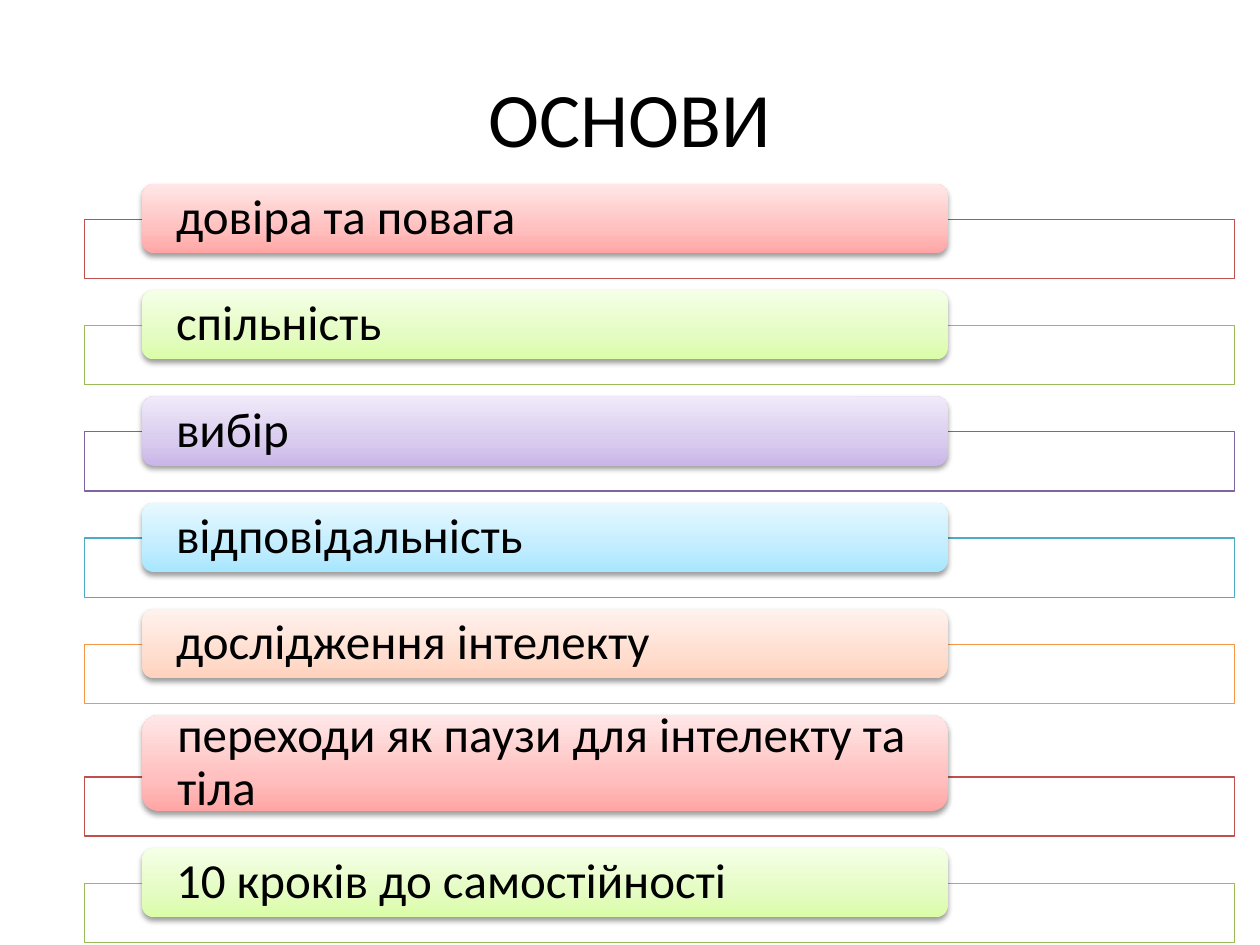
from lxml.etree import SubElement
from pptx import Presentation
from pptx.dml.color import RGBColor as RGB
from pptx.enum.shapes import MSO_SHAPE as SHAPE
from pptx.enum.text import MSO_ANCHOR as ANCHOR, PP_ALIGN as ALIGN
from pptx.oxml import parse_xml
from pptx.oxml.ns import nsdecls, qn
from pptx.util import Inches, Pt

COLORS = {"text": "000000", "frame": "FFFFFF", "shadow": "000000"}

# Frame line, then the gradient from bottom to top
THEMES = {
    "red": ("C0504D", ("FFA6A5", "FFC0BF", "FFE7E7")),
    "green": ("9BBB59", ("DAFDA7", "E4FCC2", "F5FFE7")),
    "purple": ("8064A2", ("C9B5E8", "D8CBEE", "F0EAF9")),
    "blue": ("4BACC6", ("A7E6FF", "C1EDFF", "E7F8FF")),
    "orange": ("F79646", ("FFD2BD", "FFDED0", "FFF2ED")),
}

# Grid units are tenths of an inch: 100 columns by 75 rows
COLS, ROWS = 100, 75
PILL_H, TALL_H, FRAME_H = 5.5, 7.6, 4.7
FIRST, LAST = 14.6, 67.3
OVERLAP = 2.7

ITEMS = [
    ("довіра та повага", "red", PILL_H),
    ("спільність", "green", PILL_H),
    ("вибір", "purple", PILL_H),
    ("відповідальність", "blue", PILL_H),
    ("дослідження інтелекту", "orange", PILL_H),
    ("переходи як паузи для інтелекту та тіла", "red", TALL_H),
    ("10 кроків до самостійності", "green", PILL_H),
]


class Deck:
    def __init__(self):
        self.prs = Presentation()
        self.prs.slide_width, self.prs.slide_height = Inches(10), Inches(7.5)
        self.s = self.prs.slides.add_slide(self.prs.slide_layouts[5])

    def place(self, x, y, w, h):
        dx, dy = self.prs.slide_width / COLS, self.prs.slide_height / ROWS
        return [int(v) for v in (x * dx, y * dy, w * dx, h * dy)]

    def set_text(self, tf, text, size, frame_format, para_format):
        for name, value in frame_format.items():
            setattr(tf, name, value)
        p = tf.paragraphs[0]
        for name, value in para_format.items():
            setattr(p, name, value)
        r = p.add_run()
        r.text = text
        for name, value in {"size": Pt(size), "name": "Calibri"}.items():
            setattr(r.font, name, value)
        r.font.color.rgb = RGB.from_string(COLORS["text"])

    def title(self, text, *box):
        sp = self.s.shapes.title
        sp.left, sp.top, sp.width, sp.height = self.place(*box)
        self.set_text(sp.text_frame, text, 44,
                      {"vertical_anchor": ANCHOR.MIDDLE}, {"alignment": ALIGN.CENTER})

    def frame(self, line, *box):
        sp = self.s.shapes.add_shape(SHAPE.RECTANGLE, *self.place(*box))
        sp.shadow.inherit = False
        sp.fill.solid()
        sp.fill.fore_color.rgb = RGB.from_string(COLORS["frame"])
        color = sp._element.spPr.find(".//" + qn("a:srgbClr"))
        SubElement(color, qn("a:alpha"), val="90000")
        sp.line.color.rgb = RGB.from_string(line)
        sp.line.width = Pt(0.75)

    def pill(self, text, colors, *box):
        sp = self.s.shapes.add_shape(SHAPE.ROUNDED_RECTANGLE, *self.place(*box))
        sp.line.fill.background()
        # Three-stop gradient running upwards
        stops = "".join(
            f'<a:gs pos="{pos}"><a:srgbClr val="{c}"/></a:gs>'
            for pos, c in zip((0, 35000, 100000), colors))
        pr = sp._element.spPr
        pr.find(qn("a:prstGeom")).addnext(parse_xml(
            f'<a:gradFill {nsdecls("a")} rotWithShape="1"><a:gsLst>{stops}</a:gsLst>'
            '<a:lin ang="16200000" scaled="0"/></a:gradFill>'))
        # Soft shadow straight below
        pr.append(parse_xml(
            f'<a:effectLst {nsdecls("a")}><a:outerShdw blurRad="{Pt(3.1)}" '
            f'dist="{Pt(1.6)}" dir="5400000" rotWithShape="0">'
            f'<a:srgbClr val="{COLORS["shadow"]}"><a:alpha val="38000"/></a:srgbClr>'
            '</a:outerShdw></a:effectLst>'))
        self.set_text(sp.text_frame, text, 28, {
            "word_wrap": True, "vertical_anchor": ANCHOR.MIDDLE,
            "margin_left": Inches(0.24), "margin_right": Inches(0.24),
            "margin_top": 0, "margin_bottom": 0,
        }, {"alignment": ALIGN.LEFT, "line_spacing": 0.9})


def main():
    deck = Deck()
    deck.title("ОСНОВИ", 5, 3, 90, 12.5)

    # Equal gaps between the pills, each overlapping its frame
    heights = [h for _, _, h in ITEMS[:-1]]
    gap = (LAST - FIRST - sum(heights)) / len(heights)
    y = FIRST
    for text, theme, h in ITEMS:
        line, colors = THEMES[theme]
        deck.frame(line, 6.7, y + h - OVERLAP, 91.3, FRAME_H)
        deck.pill(text, colors, 11.3, y, 63.9, h)
        y += h + gap

    deck.prs.save("out.pptx")


if __name__ == "__main__":
    main()
